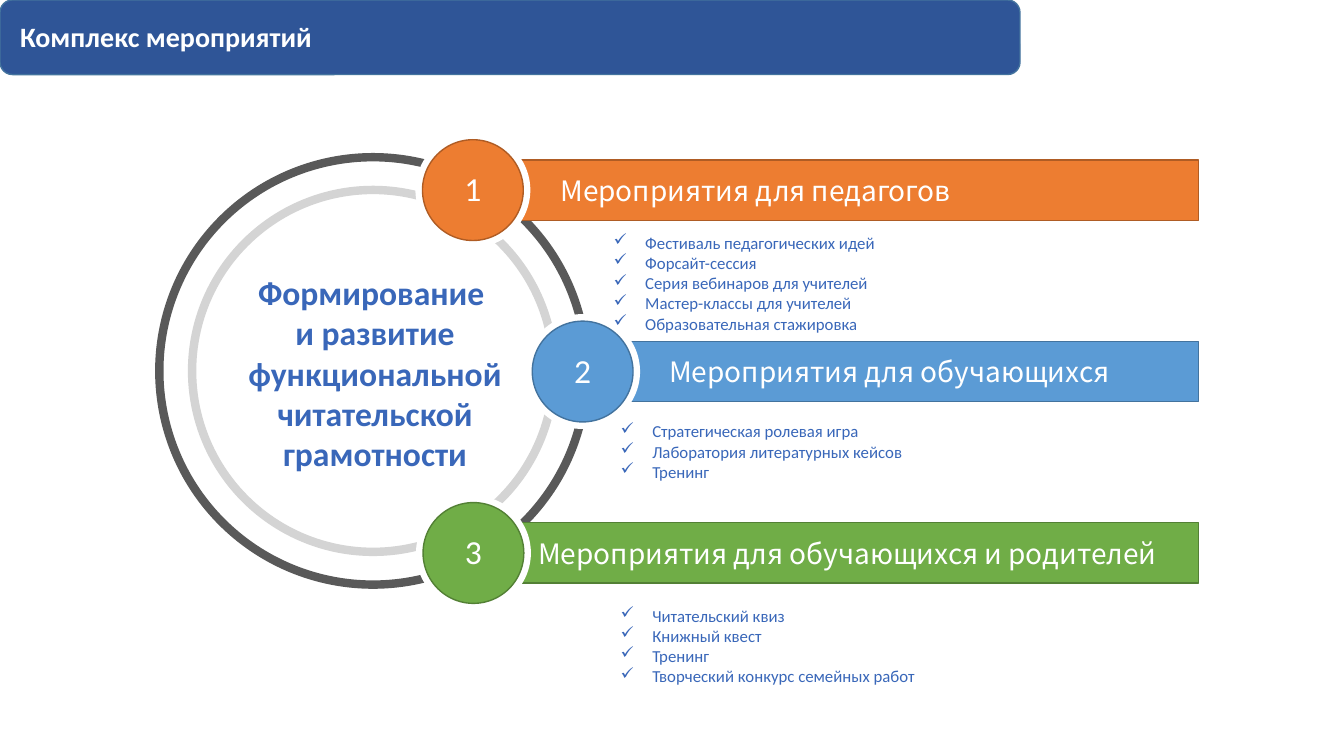
from dataclasses import dataclass

from lxml.etree import SubElement
from pptx import Presentation
from pptx.dml.color import RGBColor as Rgb
from pptx.enum.shapes import MSO_SHAPE as Shape
from pptx.enum.text import MSO_AUTO_SIZE as AutoSize, PP_ALIGN as Align
from pptx.oxml.ns import qn
from pptx.util import Pt


@dataclass(frozen=True)
class Theme:
    body: str = "Calibri"
    heading: str = "Noto Sans CJK SC"
    white: str = "FFFFFF"
    text: str = "3967B9"
    ring: str = "595959"
    banner: str = "2F5597"
    blue: str = "5B9BD5"
    blue_edge: str = "43739E"
    orange: str = "ED7D31"
    orange_edge: str = "AF5C24"
    green: str = "70AD47"
    green_edge: str = "538035"
    large: int = 24
    medium: int = 20
    small: int = 12


@dataclass(frozen=True)
class Track:
    number: str
    title: str
    items: tuple
    fill: str
    edge: str
    badge_x: float
    bar_x: float
    title_x: float
    list_x: float
    list_drop: float


THEME = Theme()
TRACKS = (
    Track("1", "Мероприятия для педагогов",
          ("Фестиваль педагогических идей", "Форсайт-сессия",
           "Серия вебинаров для учителей", "Мастер-классы для учителей",
           "Образовательная стажировка"),
          THEME.orange, THEME.orange_edge, 337.8, 371.5, 393.1, 431.3, 48.5),
    Track("2", "Мероприятия для обучающихся",
          ("Стратегическая ролевая игра", "Лаборатория литературных кейсов",
           "Тренинг"),
          THEME.blue, THEME.blue_edge, 416.2, 442.8, 470.9, 436.3, 53.5),
    Track("3", "Мероприятия для обучающихся и родителей",
          ("Читательский квиз", "Книжный квест", "Тренинг",
           "Творческий конкурс семейных работ"),
          THEME.green, THEME.green_edge, 338.2, 371.5, 377.3, 436.3, 55.6),
)


def apply(target, values):
    for name, value in values.items():
        setattr(target, name, value)


def set_opacity(figure, percent):
    for color in figure._element.spPr.iter(qn("a:srgbClr")):
        SubElement(color, qn("a:alpha"), val=str(percent * 1000))


def add_figure(page, kind, box, fill=None, edge=None, weight=1):
    figure = page.shapes.add_shape(kind, *map(Pt, box))
    figure.shadow.inherit = False
    for paint, color in ((figure.fill, fill), (figure.line.fill, edge)):
        if color is None:
            paint.background()
            continue
        paint.solid()
        paint.fore_color.rgb = Rgb.from_string(color)
    if edge:
        figure.line.width = Pt(weight)
    return figure


def add_text(page, box, lines, size, color, font=THEME.body, bold=False,
             align=Align.LEFT, bullet=None):
    frame = page.shapes.add_textbox(*map(Pt, box)).text_frame
    apply(frame, {"word_wrap": True, "auto_size": AutoSize.SHAPE_TO_FIT_TEXT})
    for index, line in enumerate(lines):
        para = frame.add_paragraph() if index else frame.paragraphs[0]
        apply(para, {"text": line, "alignment": align})
        if bullet:
            props = para._p.get_or_add_pPr()
            props.set("marL", str(int(Pt(22.5))))
            props.set("indent", str(int(Pt(-22.5))))
            SubElement(props, qn("a:buChar"), char=bullet)
        for span in para.runs:
            apply(span.font, {"name": font, "size": Pt(size), "bold": bold})
            span.font.color.rgb = Rgb.from_string(color)


def around(x, y, diameter):
    return x - diameter / 2, y - diameter / 2, diameter, diameter


def draw_banner(page, box):
    left, top, width, height = box
    add_figure(page, Shape.ROUNDED_RECTANGLE, box, THEME.banner, THEME.blue_edge)
    add_text(page, (left + 7.2, top + 10.1, width - 68, 31.5),
             ["Комплекс мероприятий"], THEME.medium, THEME.white, bold=True)


def draw_goal(page, box):
    left, top, width, height = box
    x, y = left + width / 2, top + height / 2
    add_figure(page, Shape.OVAL, box, edge=THEME.ring, weight=6)
    inner = add_figure(page, Shape.OVAL, around(x, y, width - 46.8),
                       THEME.white, THEME.ring, 6)
    set_opacity(inner, 25)
    add_text(page, (x - 104.4, y - 74.2, 211.7, 152.6),
             ["Формирование \vи развитие функциональной читательской грамотности"],
             THEME.large, THEME.text, bold=True, align=Align.CENTER)


def draw_bar(page, box, track):
    left, top, width, height = box
    add_figure(page, Shape.RECTANGLE, box, track.fill, track.edge)
    add_text(page, (track.title_x, top + 6.1, left + width - track.title_x + 8, 31.5),
             [track.title], THEME.medium, THEME.white, THEME.heading)
    add_text(page, (track.list_x, top + track.list_drop, 402.5, 14.4 * len(track.items) + 7.2),
             track.items, THEME.small, THEME.text, bullet="✓")


def draw_badge(page, x, y, track):
    add_figure(page, Shape.OVAL, around(x, y, 82.1), THEME.white)
    add_figure(page, Shape.OVAL, around(x, y, 72), track.fill, track.edge)
    add_text(page, (x - 41.4, y - 19.2, 82.8, 36),
             [track.number], THEME.large, THEME.white, align=Align.CENTER)


def draw_tracks(page, box):
    left, top, width, height = box
    bar_height = 43.2
    pitch = (height - bar_height) / (len(TRACKS) - 1)
    tops = [top + pitch * index for index in range(len(TRACKS))]
    for track, bar_top in zip(TRACKS, tops):
        bar = (track.bar_x, bar_top, left + width - track.bar_x, bar_height)
        draw_bar(page, bar, track)
    for track, bar_top in zip(TRACKS, tops):
        draw_badge(page, track.badge_x, bar_top + bar_height / 2, track)


def main():
    deck = Presentation()
    apply(deck, {"slide_width": Pt(960), "slide_height": Pt(540)})
    page = deck.slides.add_slide(deck.slide_layouts[6])
    draw_goal(page, (113.8, 112.3, 305.3, 305.3))
    draw_tracks(page, (371.5, 114.2, 484.6, 302.4))
    draw_banner(page, (0, 0, 728.6, 53.3))
    deck.save("out.pptx")


if __name__ == "__main__":
    main()
